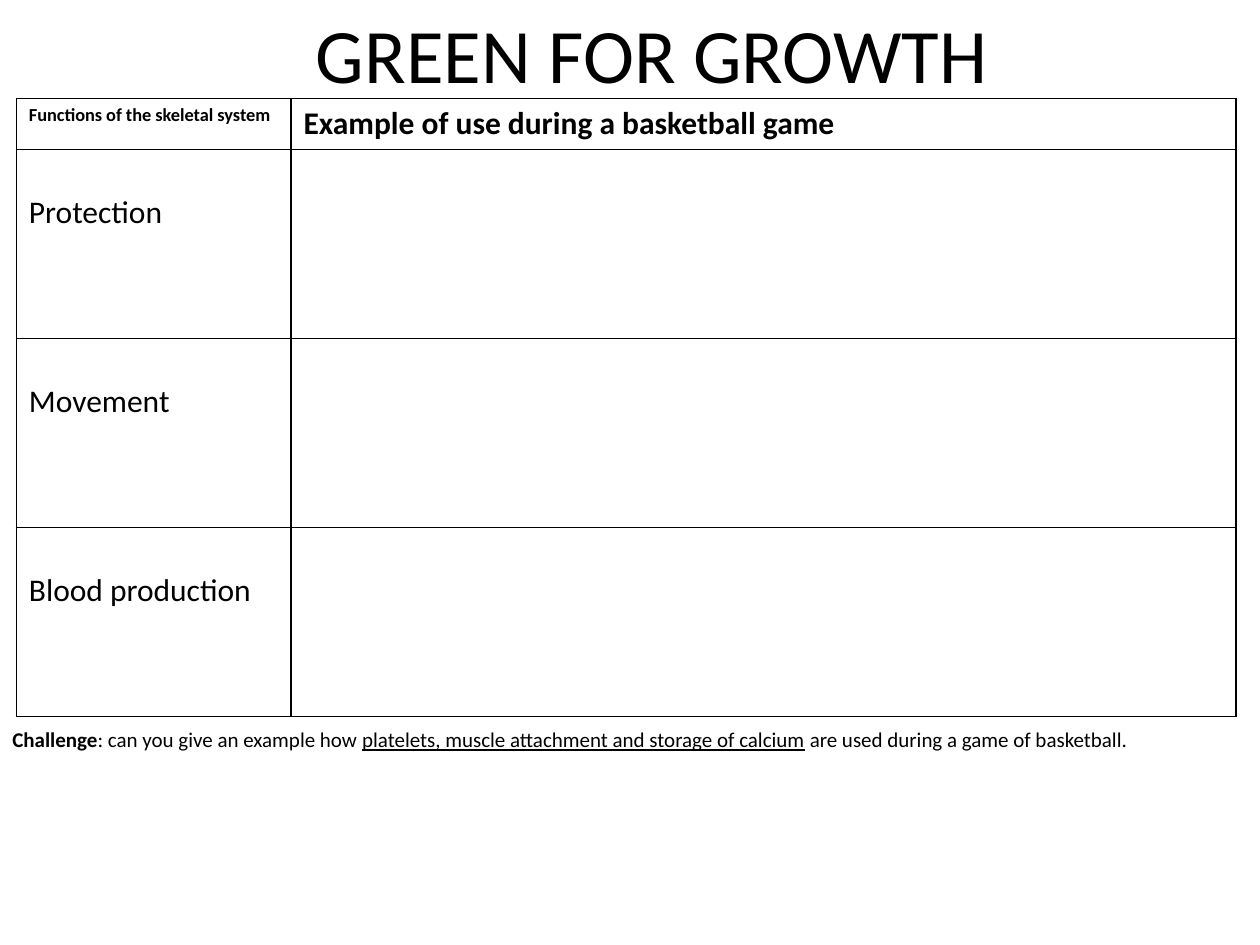
from dataclasses import dataclass

from lxml import etree
from pptx import Presentation
from pptx.dml.color import RGBColor
from pptx.enum.text import MSO_AUTO_SIZE
from pptx.oxml.ns import qn
from pptx.util import Inches, Pt

FIT_SHAPE = MSO_AUTO_SIZE.SHAPE_TO_FIT_TEXT


@dataclass(frozen=True)
class Theme:
    font: str = "Calibri"
    ink: RGBColor = RGBColor(0, 0, 0)
    paper: RGBColor = RGBColor(255, 255, 255)
    title: float = 44
    body: float = 18
    note: float = 12
    small: float = 10.5
    border: float = 1


THEME = Theme()
HEADERS = [("Functions of the skeletal system", THEME.small),
           ("Example of use during a basketball game", THEME.body)]
FUNCTIONS = ["Protection", "Movement", "Blood production"]
CHALLENGE = [
    ("Challenge", True, False),
    (": can you give an example how ", False, False),
    ("platelets, muscle attachment and storage of calcium", False, True),
    (" are used during a game of basketball.", False, False),
]


def style_run(r, size, bold=False, underline=False):
    r.font.name = THEME.font
    r.font.size = Pt(size)
    r.font.bold = bold
    r.font.underline = underline
    r.font.color.rgb = THEME.ink


def add_text(slide, box, parts, size, wrap=True):
    tf = slide.shapes.add_textbox(*map(Inches, box)).text_frame
    tf.word_wrap = wrap
    tf.auto_size = FIT_SHAPE
    for text, bold, underline in parts:
        r = tf.paragraphs[0].add_run()
        r.text = text
        style_run(r, size, bold, underline)


def set_borders(cell):
    tc_pr = cell._tc.get_or_add_tcPr()
    for i, side in enumerate(("lnL", "lnR", "lnT", "lnB")):
        ln = etree.Element(qn(f"a:{side}"), w=str(Pt(THEME.border)))
        fill = etree.SubElement(ln, qn("a:solidFill"))
        etree.SubElement(fill, qn("a:srgbClr"), val=str(THEME.ink))
        tc_pr.insert(i, ln)


def set_cell(cell, text, size, bold=False):
    cell.text = text
    p = cell.text_frame.paragraphs[0]
    p.font.size = Pt(size)
    for r in p.runs:
        style_run(r, size, bold)
    cell.fill.solid()
    cell.fill.fore_color.rgb = THEME.paper
    set_borders(cell)


def add_worksheet(slide, box, label_width, header_height):
    left, top, width, height = box
    rows = len(FUNCTIONS) + 1
    table = slide.shapes.add_table(rows, 2, *map(Inches, box)).table
    table.columns[0].width = Inches(label_width)
    table.columns[1].width = Inches(width - label_width)
    row_height = (height - header_height) / len(FUNCTIONS)
    for i, row in enumerate(table.rows):
        row.height = Inches(row_height if i else header_height)

    # Header row
    for col, (text, size) in enumerate(HEADERS):
        set_cell(table.cell(0, col), text, size, bold=True)

    # One function per row, with an empty answer cell
    for i, name in enumerate(FUNCTIONS, start=1):
        label = table.cell(i, 0)
        set_cell(label, name, THEME.body)
        label.margin_top = Inches(0.35)
        set_cell(table.cell(i, 1), "", THEME.body)


def main():
    prs = Presentation()
    prs.slide_width, prs.slide_height = Inches(10), Inches(7.5)
    slide = prs.slides.add_slide(prs.slide_layouts[6])

    # Worksheet table, challenge line and title
    add_worksheet(slide, (0.13, 0.78, 9.68, 4.9), 2.18, 0.4)
    add_text(slide, (0, 5.72, 10, 0.3), CHALLENGE, THEME.note)
    add_text(slide, (2.41, 0, 5.6, 0.84), [("GREEN FOR GROWTH", False, False)],
             THEME.title, wrap=False)

    prs.save("out.pptx")


if __name__ == "__main__":
    main()
